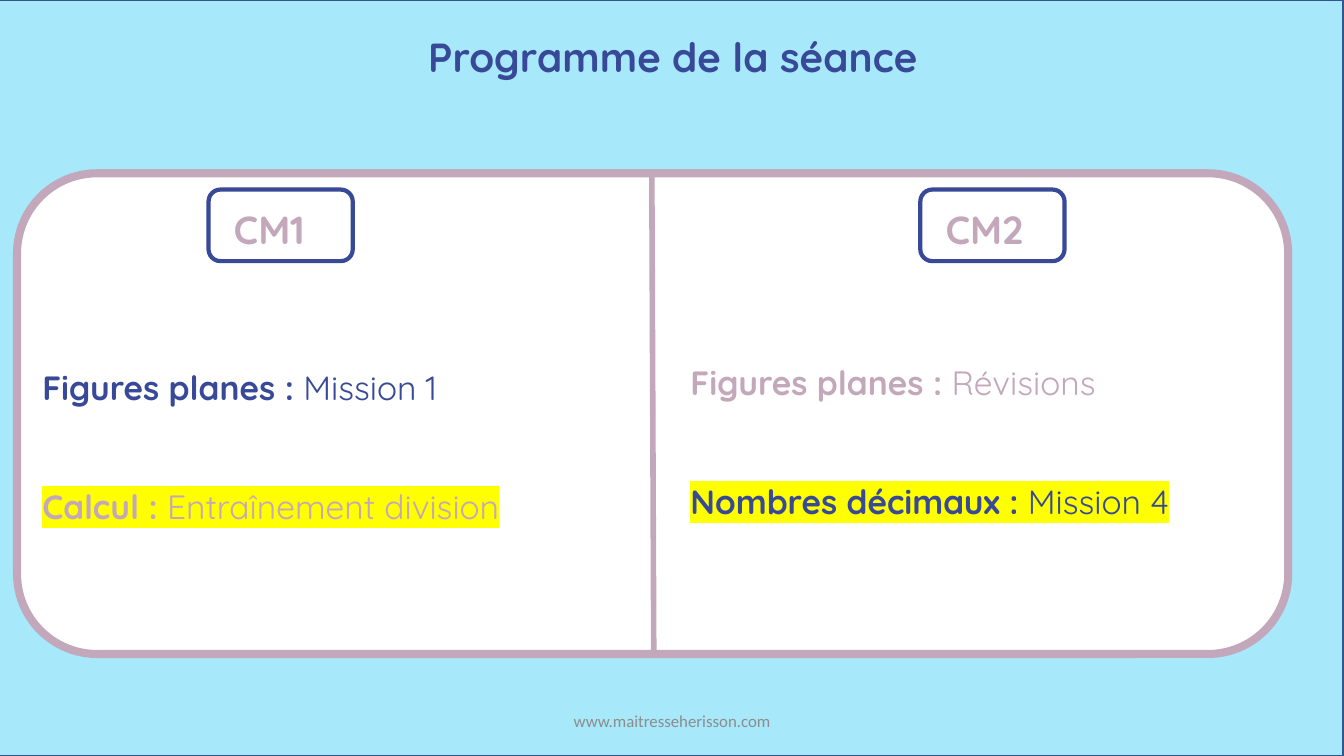
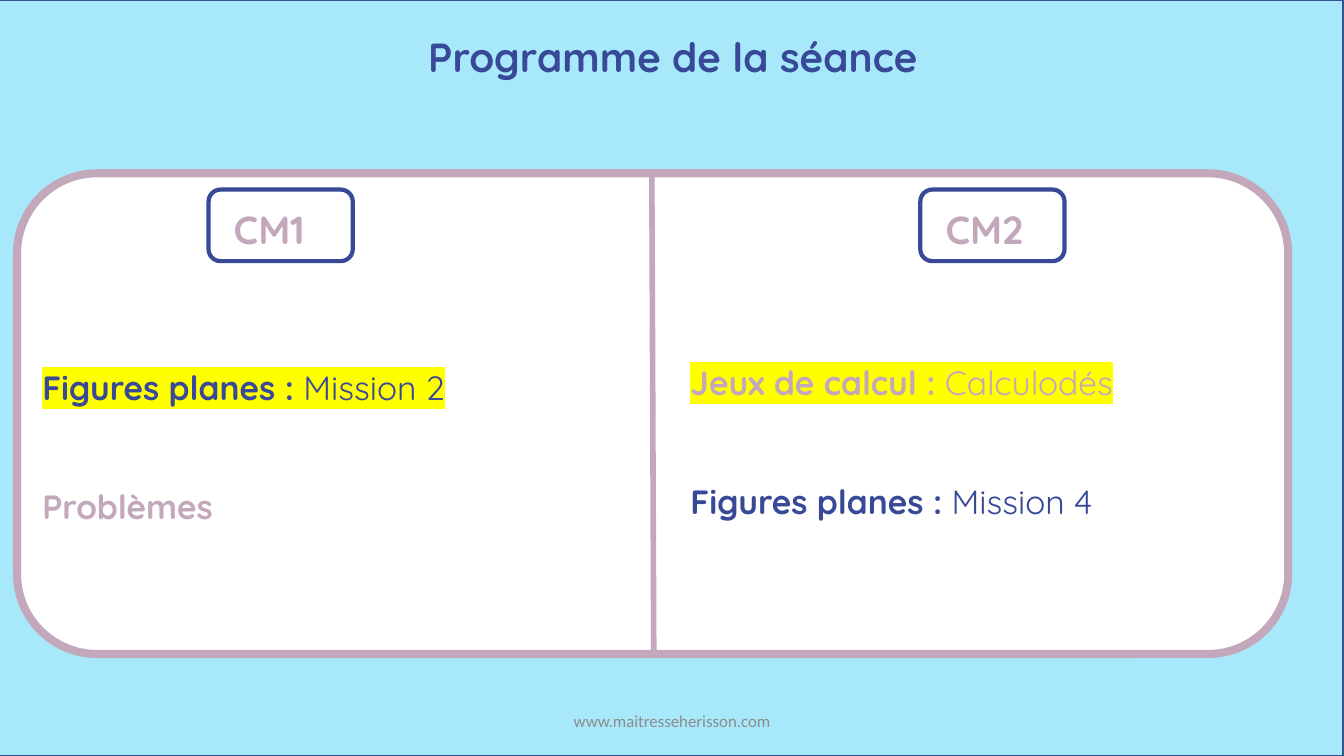
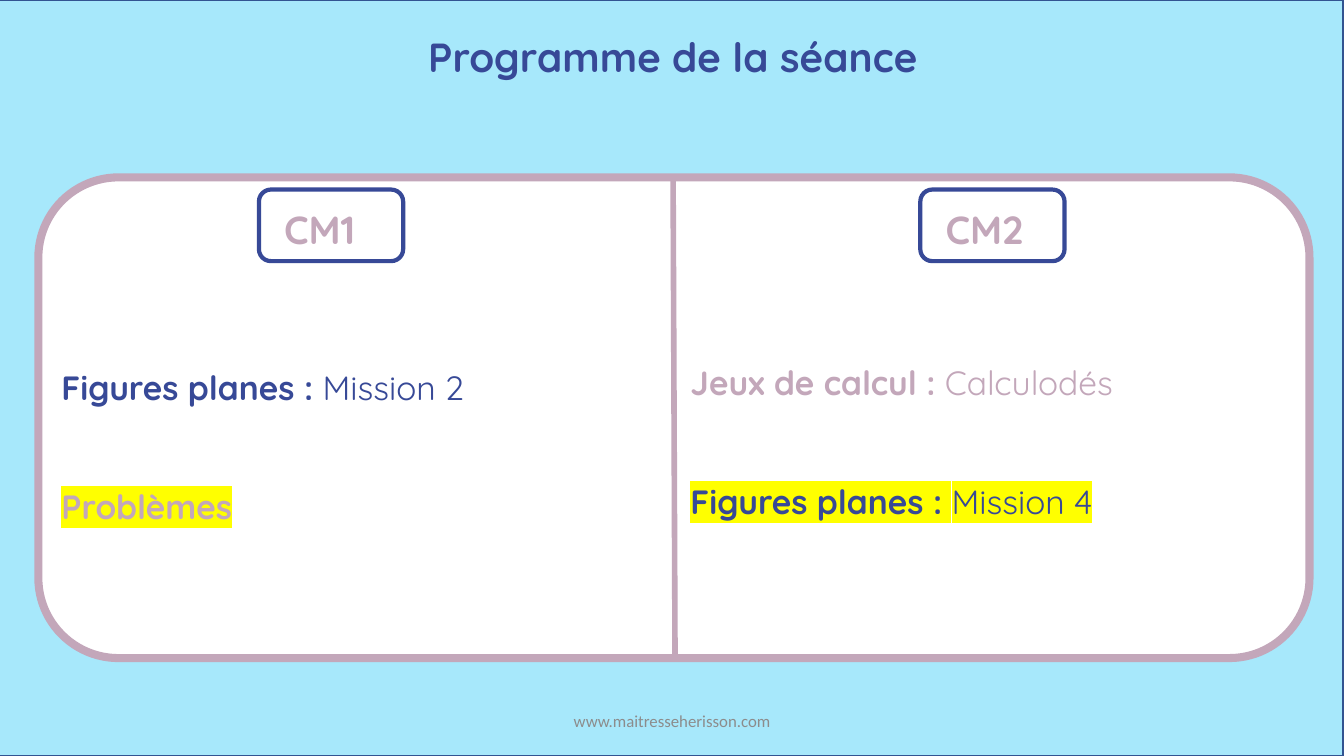
from lxml import etree
from pptx import Presentation
from pptx.dml import color
from pptx.enum import shapes, text
from pptx.oxml import ns
from pptx.util import Pt

COLORS = {
    "sky": "A7E8FB",
    "frame": "325491",
    "navy": "374997",
    "mauve": "C3A7BA",
    "white": "FFFFFF",
    "grey": "8C8C8C",
    "yellow": "FFFF00",
}
WIDTH, HEIGHT = 960, 540


def rgb(key):
    return color.RGBColor.from_string(COLORS[key])


class Deck:
    heading_font = "Quicksand"
    footer_font = "Calibri"

    def __init__(self):
        self.prs = Presentation()
        self.prs.slide_width, self.prs.slide_height = Pt(WIDTH), Pt(HEIGHT)
        self.slide = None

    def new_slide(self):
        self.slide = self.prs.slides.add_slide(self.prs.slide_layouts[3])
        self.block("RECTANGLE", (-0.7, 0, WIDTH, HEIGHT), "sky", "frame", 1)

    def block(self, kind, box, fill, line, weight):
        block = self.slide.shapes.add_shape(shapes.MSO_SHAPE[kind], *map(Pt, box))
        block.shadow.inherit = False
        block.fill.solid()
        block.fill.fore_color.rgb = rgb(fill)
        block.line.color.rgb = rgb(line)
        block.line.width = Pt(weight)
        return block

    def style(self, paragraph, size, ink, font=heading_font, bold=None, align="LEFT"):
        paragraph.alignment = text.PP_ALIGN[align]
        paragraph.space_before = Pt(0)
        paragraph.font.size = Pt(size)
        paragraph.font.name = font
        paragraph.font.bold = bold
        paragraph.font.color.rgb = rgb(ink)

    def placeholder(self, index, box):
        holder = self.slide.placeholders[index]
        holder.left, holder.top, holder.width, holder.height = map(Pt, box)
        self.slide.shapes._spTree.append(holder._element)
        frame = holder.text_frame
        frame.auto_size = text.MSO_AUTO_SIZE.NONE
        frame.vertical_anchor = text.MSO_ANCHOR.TOP
        return frame

    def title(self, words):
        frame = self.placeholder(0, (0.7, 19.4, WIDTH, 42.5))
        frame.text = words
        self.style(frame.paragraphs[0], 29, "navy", bold=True, align="CENTER")

    def panel(self, left, top):
        width, height = 908, 343.4
        self.block("ROUNDED_RECTANGLE", (left, top, width, height), "white", "mauve", 5.75)
        middle = left + width / 2
        divider = self.slide.shapes.add_connector(
            shapes.MSO_CONNECTOR.STRAIGHT,
            Pt(middle - 0.6), Pt(top), Pt(middle + 0.8), Pt(top + height))
        divider.line.color.rgb = rgb("mauve")
        divider.line.width = Pt(4)
        etree.SubElement(divider._element.spPr, ns.qn("a:effectLst"))

    def level(self, words, left):
        badge = self.block("ROUNDED_RECTANGLE", (left, 135.4, 103, 51.1), "white", "navy", 3)
        frame = badge.text_frame
        frame.margin_left, frame.margin_top = Pt(15.5), Pt(9)
        frame.margin_right = frame.margin_bottom = Pt(0)
        frame.vertical_anchor = text.MSO_ANCHOR.TOP
        frame.text = words
        self.style(frame.paragraphs[0], 28, "mauve", bold=True)

    def activities(self, index, box, inks, items, current):
        frame = self.placeholder(index, box)
        for row, ((subject, task), ink) in enumerate(zip(items, inks)):
            paragraph = frame.add_paragraph() if row else frame.paragraphs[0]
            properties = paragraph._p.get_or_add_pPr()
            properties.set("marL", "0")
            properties.set("indent", "0")
            etree.SubElement(properties, ns.qn("a:buNone"))
            self.style(paragraph, 24, ink)
            if row:
                paragraph.space_before = Pt(56.4)
            for words, bold in ((subject, True), (task, False)):
                if words:
                    run = paragraph.add_run()
                    run.text = words
                    run.font.bold = bold
                    if row == current:
                        self.highlight(run)

    def highlight(self, run):
        marker = etree.SubElement(run._r.get_or_add_rPr(), ns.qn("a:highlight"))
        etree.SubElement(marker, ns.qn("a:srgbClr"), val=COLORS["yellow"])

    def footer(self, words):
        frame = self.slide.shapes.add_textbox(*map(Pt, (318.2, 500.4, 324, 28.8))).text_frame
        frame.word_wrap = True
        frame.vertical_anchor = text.MSO_ANCHOR.MIDDLE
        frame.text = words
        self.style(frame.paragraphs[0], 12, "grey", self.footer_font, align="CENTER")


def main():
    shapes_1 = ("Figures planes : ", "Mission 1")
    shapes_2 = ("Figures planes : ", "Mission 2")
    shapes_4 = ("Figures planes : ", "Mission 4")
    review = ("Figures planes : ", "Révisions")
    division = ("Calcul : ", "Entraînement division")
    decimals = ("Nombres décimaux : ", "Mission 4")
    problems = ("Problèmes", "")
    games = ("Jeux de calcul : ", "Calculodés")
    usual = {"panel": (12.2, 123.8), "level": 149, "list": 23}
    shifted = {"panel": (27.4, 126.7), "level": 185, "list": 36.7}
    sessions = [
        (usual, (shapes_1, division), 1, (review, decimals), 1),
        (usual, (shapes_2, problems), 0, (games, shapes_4), 0),
        (shifted, (shapes_2, problems), 1, (games, shapes_4), 1),
    ]
    deck = Deck()
    for place, cm1, cm1_current, cm2, cm2_current in sessions:
        deck.new_slide()
        deck.panel(*place["panel"])
        deck.title("Programme de la séance")
        deck.level("CM1", place["level"])
        deck.level("CM2", 657.4)
        deck.activities(1, (place["list"], 258.5, 435, 124), ("navy", "mauve"), cm1, cm1_current)
        deck.activities(2, (486, 254.9, 413.3, 124), ("mauve", "navy"), cm2, cm2_current)
        deck.footer("www.maitresseherisson.com")
    deck.prs.save("out.pptx")


if __name__ == "__main__":
    main()
